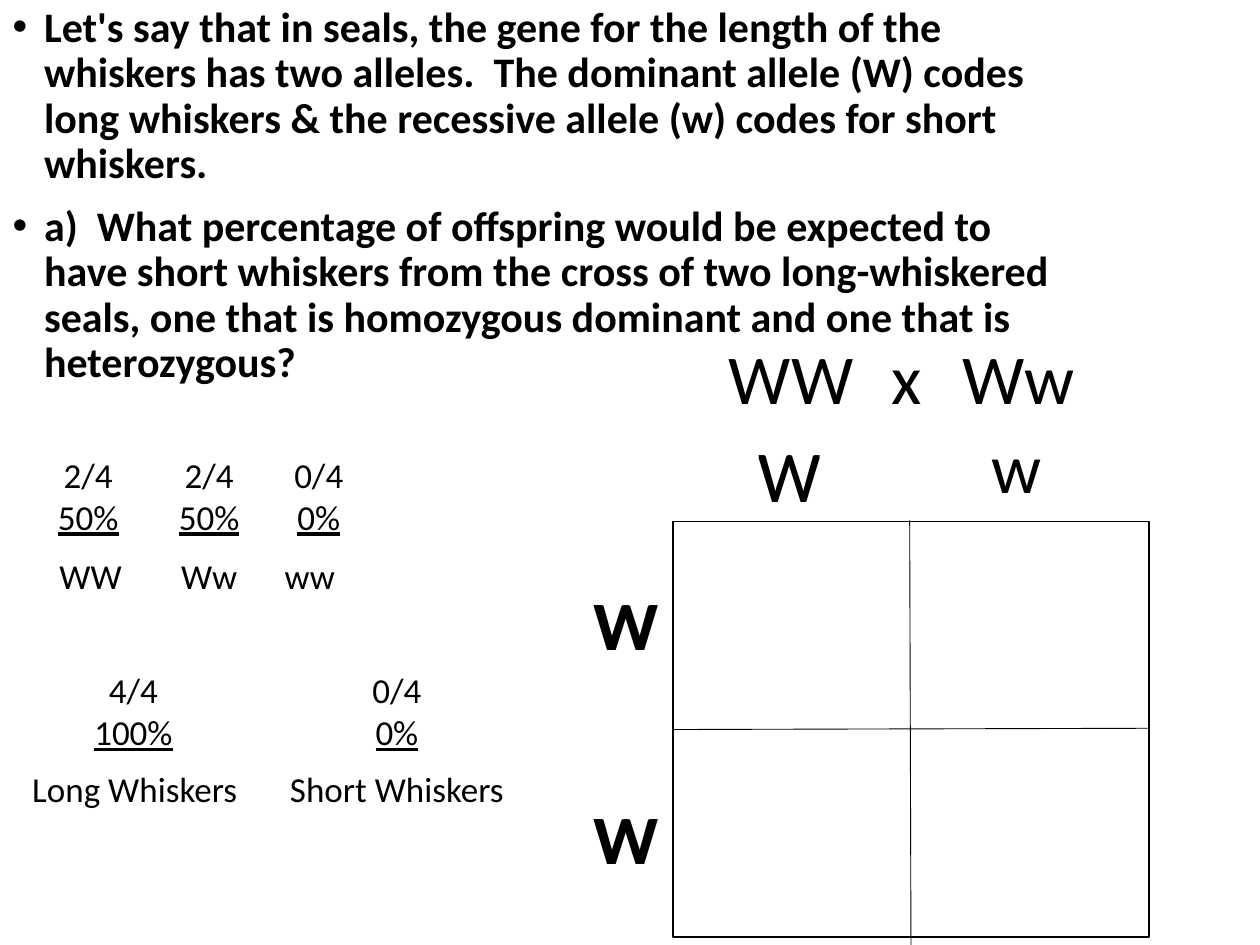
from collections import namedtuple

from lxml.etree import SubElement
from pptx import Presentation
from pptx.dml.color import RGBColor
from pptx.enum.shapes import MSO_CONNECTOR, MSO_SHAPE
from pptx.enum.text import MSO_ANCHOR, MSO_AUTO_SIZE, PP_ALIGN
from pptx.oxml.ns import qn
from pptx.util import Inches, Pt

BLACK = RGBColor(0, 0, 0)
WHITE = RGBColor(255, 255, 255)
FONT = "Calibri"
SLIDE_WIDTH, SLIDE_HEIGHT = Inches(10), Inches(7.5)
COLUMN, ROW = SLIDE_WIDTH / 100, SLIDE_HEIGHT / 75
ALLELE_WIDTHS = {"W": 7, "w": 6, "x": 4.5}
ALLELE_HEIGHT = 7.7
QUESTION = [
    "Let's say that in seals, the gene for the length of the whiskers has two alleles.  "
    "The dominant allele (W) codes long whiskers & the recessive allele (w) codes for "
    "short whiskers.",
    "a)  What percentage of offspring would be expected to have short whiskers from the "
    "cross of two long-whiskered seals, one that is homozygous dominant and one that is "
    "heterozygous? ",
]

Box = namedtuple("Box", "left top width height")


def to_emu(box):
    """Turn a box in grid columns and rows into slide lengths."""
    return (round(box.left * COLUMN), round(box.top * ROW),
            round(box.width * COLUMN), round(box.height * ROW))


def write(paragraph, text, size=20, bold=False, underline=False, align=None):
    """Put formatted text into a paragraph."""
    run = paragraph.add_run()
    run.text = text
    run.font.name = FONT
    run.font.size = Pt(size)
    run.font.bold = bold
    run.font.underline = underline
    run.font.color.rgb = BLACK
    paragraph.alignment = align


def add_label(slide, box, lines, size=20):
    """Add a centred label whose second line, if any, is underlined."""
    frame = slide.shapes.add_textbox(*to_emu(box)).text_frame
    frame.word_wrap = False
    frame.auto_size = MSO_AUTO_SIZE.SHAPE_TO_FIT_TEXT
    for index, line in enumerate(lines):
        paragraph = frame.add_paragraph() if index else frame.paragraphs[0]
        write(paragraph, line, size=size, underline=index > 0, align=PP_ALIGN.CENTER)


def add_allele(slide, allele, left, top):
    """Add one large allele letter."""
    box = Box(left, top, ALLELE_WIDTHS[allele], ALLELE_HEIGHT)
    add_label(slide, box, [allele], size=40)


def add_question(slide, box):
    """Fill the body placeholder with the bulleted question."""
    body = slide.placeholders[1]
    body.left, body.top, body.width, body.height = to_emu(box)
    frame = body.text_frame
    frame.auto_size = MSO_AUTO_SIZE.NONE
    frame.vertical_anchor = MSO_ANCHOR.TOP
    for index, text in enumerate(QUESTION):
        paragraph = frame.add_paragraph() if index else frame.paragraphs[0]
        write(paragraph, text, size=24, bold=True, align=PP_ALIGN.LEFT)
        paragraph.line_spacing = 0.9
        paragraph.space_before = Pt(10)
        properties = paragraph._p.get_or_add_pPr()
        properties.set("marL", str(Inches(0.25)))
        properties.set("indent", str(-Inches(0.25)))
        SubElement(properties, qn("a:buFont"), typeface="Arial")
        SubElement(properties, qn("a:buChar"), char="•")


def add_cross(slide, box):
    """Write the parental cross along the top of the box."""
    for allele, share in zip("WWxWw", (0, 0.17, 0.44, 0.63, 0.8)):
        add_allele(slide, allele, box.left + share * box.width, box.top)


def add_divider(group, start, end):
    """Draw a thin divider between two grid points."""
    divider = group.shapes.add_connector(
        MSO_CONNECTOR.STRAIGHT,
        round(start[0] * COLUMN), round(start[1] * ROW),
        round(end[0] * COLUMN), round(end[1] * ROW))
    divider.line.color.rgb = BLACK
    divider.line.width = Pt(0.5)
    SubElement(divider._element.spPr, qn("a:effectLst"))


def add_punnett_square(slide, box):
    """Draw the empty square with the parents' alleles outside its edges."""
    group = slide.shapes.add_group_shape()
    square = group.shapes.add_shape(MSO_SHAPE.RECTANGLE, *to_emu(box))
    square.shadow.inherit = False
    square.fill.solid()
    square.fill.fore_color.rgb = WHITE
    square.line.color.rgb = BLACK
    square.line.width = Pt(1)
    right, bottom = box.left + box.width, box.top + box.height
    middle_x, middle_y = box.left + box.width / 2, box.top + box.height / 2
    add_divider(group, (middle_x - 0.1, box.top - 0.1), (middle_x, bottom + 0.6))
    add_divider(group, (box.left, middle_y), (right, middle_y - 0.1))

    for nudge in (0, 0.2):
        for drop in (4.2, 21.2):
            add_allele(slide, "W", box.left - 7.1 - nudge, box.top + drop)
        add_allele(slide, "W", box.left + 5.8, box.top - 7.6 - nudge / 2)
    add_allele(slide, "w", box.left + 24.3, box.top - 8.3)


def add_ratios(slide, box, outcomes):
    """Place each outcome's share of offspring above its name."""
    for name, name_center, name_width, counts, count_center, count_width in outcomes:
        add_label(slide, Box(box.left + name_center - name_width / 2,
                             box.top + box.height - 4.4, name_width, 4.4), [name])
        add_label(slide, Box(box.left + count_center - count_width / 2,
                             box.top, count_width, 7.7), counts)


def main():
    """Build and save the slide."""
    deck = Presentation()
    deck.slide_width, deck.slide_height = SLIDE_WIDTH, SLIDE_HEIGHT
    slide = deck.slides.add_slide(deck.slide_layouts[1])
    title = slide.shapes.title._element
    title.getparent().remove(title)

    add_question(slide, Box(0, 0, 86.2, 33.6))
    add_cross(slide, Box(56.8, 26.1, 29.4, ALLELE_HEIGHT))
    add_punnett_square(slide, Box(53.4, 41.4, 37.8, 33))
    add_ratios(slide, Box(1.5, 35.5, 40, 12.4), [
        ("WW", 5.7, 7, ("2/4", "50%"), 5.5, 6.9),
        ("Ww", 15.1, 6.5, ("2/4", "50%"), 15.1, 6.9),
        ("ww", 23.1, 6, ("0/4", "0%"), 23.8, 5.9),
    ])
    add_ratios(slide, Box(1.5, 52.6, 40, 12.2), [
        ("Long Whiskers", 9.2, 18.4, ("4/4", "100%"), 9.1, 8.3),
        ("Short Whiskers", 30, 19.2, ("0/4", "0%"), 30, 5.9),
    ])
    deck.save("out.pptx")


if __name__ == "__main__":
    main()
